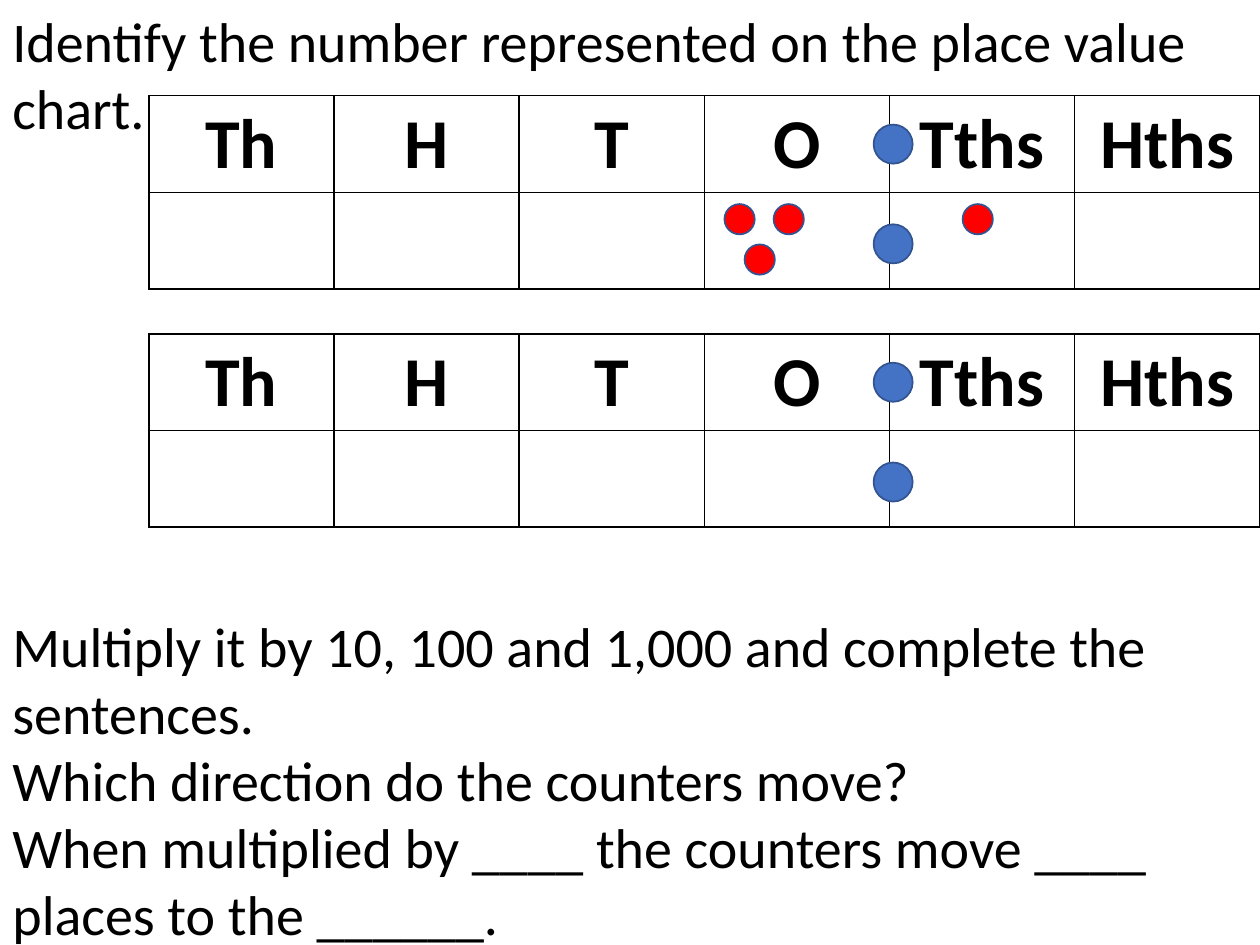
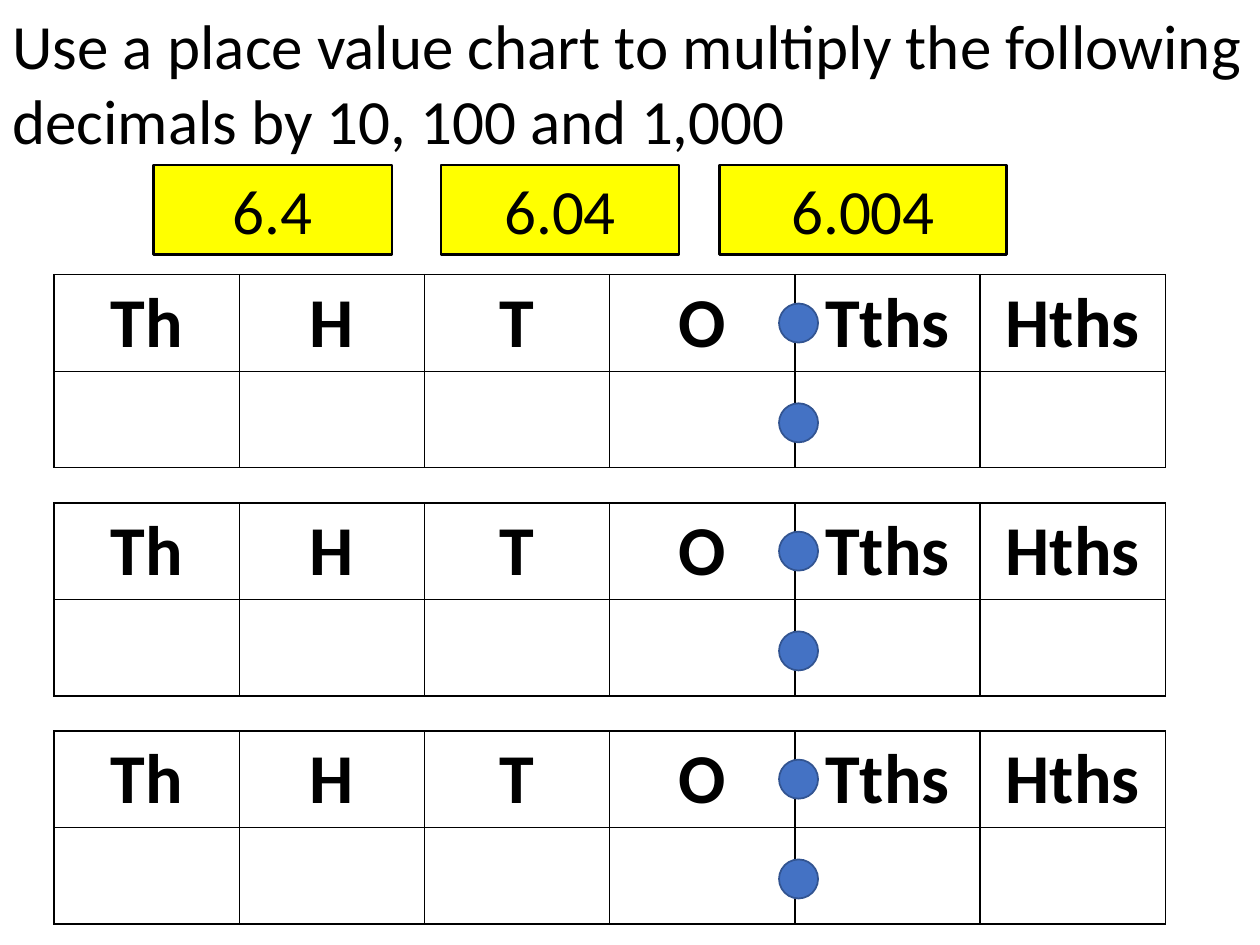
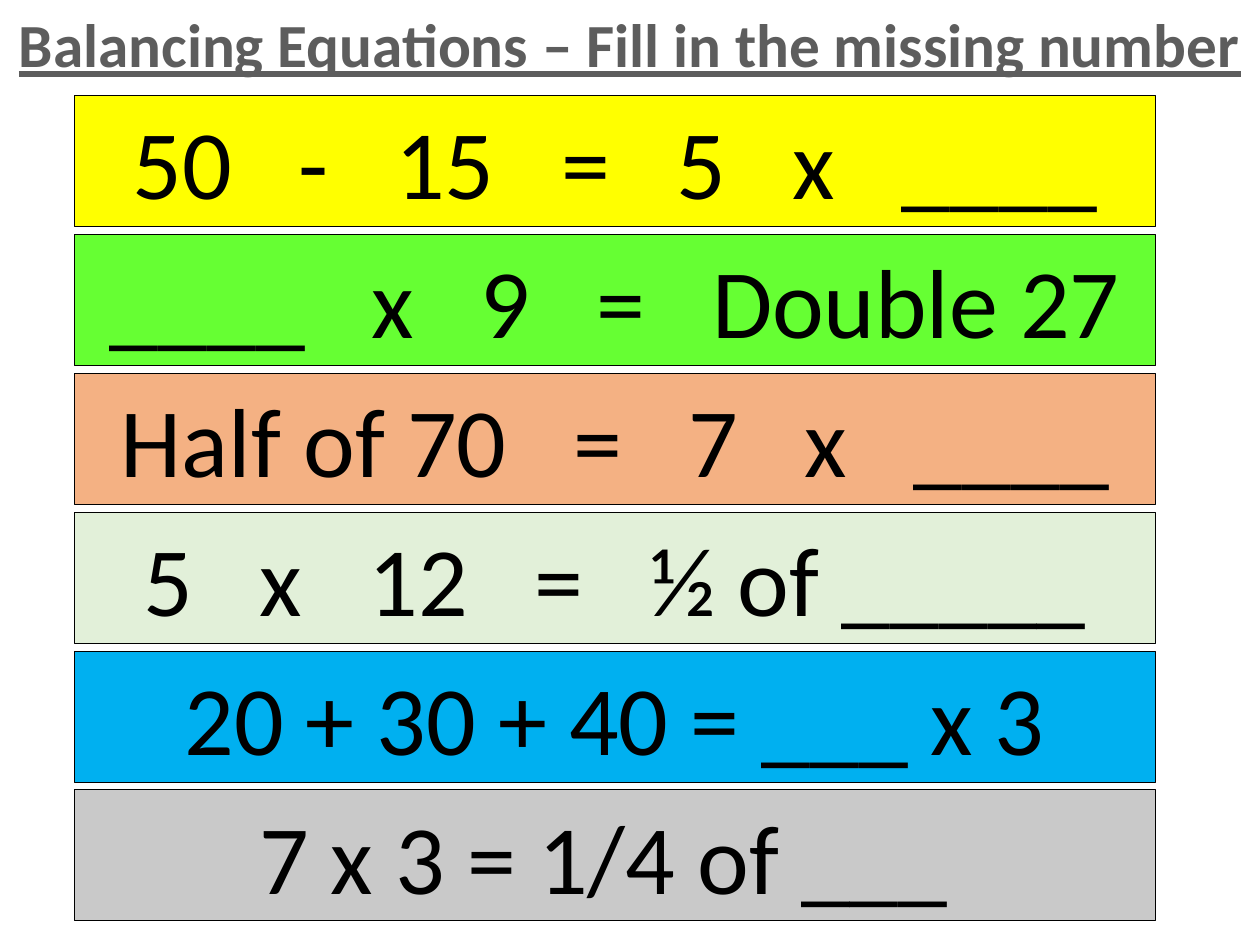
"""Build three maths slides on place value and balancing equations."""
from lxml.etree import SubElement
from pptx import Presentation
from pptx.dml.color import RGBColor
from pptx.enum.shapes import MSO_SHAPE
from pptx.enum.text import MSO_ANCHOR, PP_ALIGN
from pptx.oxml import parse_xml
from pptx.oxml.ns import nsdecls, qn
from pptx.util import Pt

FONT = "Calibri"
BLACK, WHITE, YELLOW, RED = "000000", "FFFFFF", "FFFF00", "FF0000"
DOT_FILL, DOT_LINE, HEADING = "4472C4", "325491", "5D5D5D"
SLIDE_WIDTH, SLIDE_HEIGHT = 720, 540

PLACES = ["Th", "H", "T", "O", "Tths", "Hths"]
COLUMN_WIDTH, ROW_HEIGHT = 105.84, 55.08
DOT_SIZE, DOT_PITCH = 22.32, 57
COUNTER_SIZE = 17.28

IDENTIFY = "Identify the number represented on the place value chart."
QUESTIONS = [
    "Multiply it by 10, 100 and 1,000 and complete the sentences.",
    "Which direction do the counters move?",
    "When multiplied by ____ the counters move ____ places to the ______.",
]
QUESTION_GAP = 268.8
IDENTIFY_CHARTS = (85, [54.72, 190.8])
COUNTERS = [(414, 116.64), (442.08, 116.64), (425.52, 139.68), (550.08, 116.64)]

MULTIPLY = "Use a place value chart to multiply the following decimals by 10, 100 and 1,000"
DECIMALS = [("6.4", 87.84, 136.08), ("6.04", 252, 136.08), ("6.004", 411.12, 164.16)]
MULTIPLY_CHARTS = (30.96, [156.96 + 130.32 * row for row in range(3)])

BALANCING = "Balancing Equations – Fill in the missing number"
EQUATIONS = [
    (YELLOW, ["50", "-", "15", "=", "5", "x", "____"]),
    ("66FF33", ["____", "x", "9", "=", "Double 27"]),
    ("F4B183", ["Half of 70", "=", "7", "x", "____"]),
    ("E2F0D9", ["5", "x", "12", "=", "½ of _____"]),
    ("00B0F0", ["20 + 30 + 40 = ___ x 3"]),
    ("C9C9C9", ["7 x 3 = 1/4 of ___ "]),
]
EQUATION_TOP, EQUATION_PITCH = 54.72, 79.34
TERM_GAP = 25.3


def colour(value):
    """Turn a hex string into a colour."""
    return RGBColor.from_string(value)


def add_span(para, text, size, ink=BLACK, bold=False, underline=False):
    """Add one styled run to a paragraph."""
    span = para.add_run()
    span.text = text
    span.font.name, span.font.size = FONT, Pt(size)
    span.font.bold, span.font.underline = bold, underline
    span.font.color.rgb = colour(ink)
    return span


def add_text(page, height, size, lines, align=PP_ALIGN.LEFT, **style):
    """Add a full-width text box at the top and return its paragraphs."""
    frame = page.shapes.add_textbox(0, 0, Pt(SLIDE_WIDTH), Pt(height)).text_frame
    frame.word_wrap = True
    for index, line in enumerate(lines):
        para = frame.add_paragraph() if index else frame.paragraphs[0]
        para.alignment = align
        add_span(para, line, size, **style)
    return frame.paragraphs


def add_box(page, kind, left, top, width, height, fill, line, weight):
    """Add a filled and outlined shape."""
    box = page.shapes.add_shape(kind, Pt(left), Pt(top), Pt(width), Pt(height))
    box.shadow.inherit = False
    box.fill.solid()
    box.fill.fore_color.rgb = colour(fill)
    box.line.color.rgb = colour(line)
    box.line.width = Pt(weight)
    return box


def add_label(page, left, top, width, height, fill, weight, terms, size):
    """Add a rectangle whose centred terms are set apart by wide spaces."""
    box = add_box(page, MSO_SHAPE.RECTANGLE, left, top, width, height, fill, BLACK, weight)
    frame = box.text_frame
    frame.word_wrap = True
    frame.vertical_anchor = MSO_ANCHOR.TOP
    para = frame.paragraphs[0]
    para.alignment = PP_ALIGN.CENTER
    for index, term in enumerate(terms):
        if index:
            space = add_span(para, " ", size)
            space.font._element.set("spc", str(round(TERM_GAP * 100)))
        add_span(para, term, size)


def add_circle(page, left, top, size, fill):
    """Add a counter or a decimal point."""
    add_box(page, MSO_SHAPE.OVAL, left, top, size, size, fill, DOT_LINE, 1)


def style_cell(cell):
    """Give a cell a white fill and thin black borders."""
    cell.fill.solid()
    cell.fill.fore_color.rgb = colour(WHITE)
    properties = cell._tc.get_or_add_tcPr()
    for index, side in enumerate(("lnL", "lnR", "lnT", "lnB")):
        border = parse_xml(f'<a:{side} {nsdecls("a")} w="{Pt(1)}"/>')
        fill = SubElement(border, qn("a:solidFill"))
        SubElement(fill, qn("a:srgbClr"), val=BLACK)
        properties.insert(index, border)


def add_place_chart(page, left, top):
    """Add a place value chart with its two decimal points."""
    table = page.shapes.add_table(
        2, len(PLACES), Pt(left), Pt(top),
        Pt(COLUMN_WIDTH * len(PLACES)), Pt(ROW_HEIGHT * 2)).table
    table.first_row = table.horz_banding = False
    for column in table.columns:
        column.width = Pt(COLUMN_WIDTH)
    for row in table.rows:
        row.height = Pt(ROW_HEIGHT)
        for cell in row.cells:
            style_cell(cell)
    for cell, place in zip(table.rows[0].cells, PLACES):
        para = cell.text_frame.paragraphs[0]
        para.alignment = PP_ALIGN.CENTER
        add_span(para, place, 40, bold=True)
    dot_left = left + COLUMN_WIDTH * 4 + 2 - DOT_SIZE / 2
    for row in range(2):
        add_circle(page, dot_left, top + 16.5 + DOT_PITCH * row, DOT_SIZE, DOT_FILL)


def add_place_charts(page, charts):
    """Stack place value charts at one left edge."""
    left, tops = charts
    for top in tops:
        add_place_chart(page, left, top)


def build_identify(page):
    """Fill the slide on reading a place value chart."""
    paragraphs = add_text(page, 550, 32, [IDENTIFY] + QUESTIONS)
    paragraphs[1].space_before = Pt(QUESTION_GAP)
    add_place_charts(page, IDENTIFY_CHARTS)
    for left, top in COUNTERS:
        add_circle(page, left, top, COUNTER_SIZE, RED)


def build_multiply(page):
    """Fill the slide on multiplying decimals."""
    add_text(page, 94.32, 36, [MULTIPLY])
    for decimal, left, width in DECIMALS:
        add_label(page, left, 94.32, width, 51.12, YELLOW, 1.5, [decimal], 36)
    add_place_charts(page, MULTIPLY_CHARTS)


def build_balancing(page):
    """Fill the slide of equations to balance."""
    add_text(page, 49.68, 35, [BALANCING], PP_ALIGN.CENTER,
             ink=HEADING, bold=True, underline=True)
    for row, (fill, terms) in enumerate(EQUATIONS):
        top = EQUATION_TOP + EQUATION_PITCH * row
        add_label(page, 42.48, top, 617.76, 74.88, fill, 0.5, terms, 56)


def main():
    """Build and save the deck."""
    deck = Presentation()
    deck.slide_width, deck.slide_height = Pt(SLIDE_WIDTH), Pt(SLIDE_HEIGHT)
    for build in (build_identify, build_multiply, build_balancing):
        build(deck.slides.add_slide(deck.slide_layouts[6]))
    deck.save("out.pptx")


if __name__ == "__main__":
    main()
